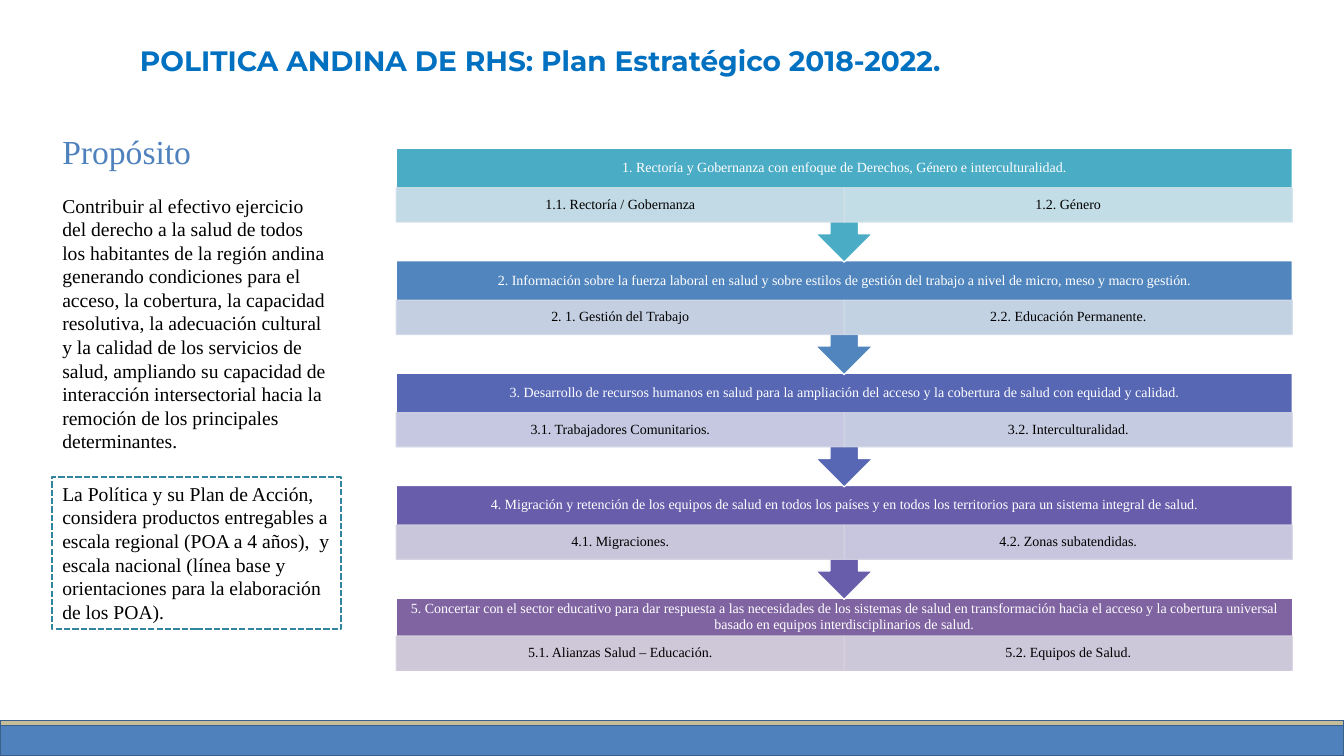
"""Build the slide on the Andean health workforce policy and its five strategic lines."""
from dataclasses import dataclass
from typing import NamedTuple

from lxml.etree import SubElement
from pptx import Presentation
from pptx.dml.color import RGBColor
from pptx.enum.dml import MSO_LINE
from pptx.enum.shapes import MSO_SHAPE
from pptx.enum.text import MSO_ANCHOR, PP_ALIGN
from pptx.oxml.ns import qn
from pptx.util import Pt


@dataclass(frozen=True)
class Theme:
    """Hold the colours, fonts and type sizes."""
    title: str = "0070C0"
    heading: str = "4F81BD"
    text: str = "000000"
    white: str = "FFFFFF"
    band: str = "4F81BD"
    band_trim: str = "C4BD97"
    band_line: str = "3A5F8C"
    note_line: str = "31859C"
    title_font: str = "Montserrat"
    body_font: str = "Times New Roman"
    title_size: float = 20
    heading_size: float = 24
    body_size: float = 14
    diagram_size: float = 10
    thin_line: float = 0.85
    note_width: float = 1.5


class Level(NamedTuple):
    """Describe one strategic line and its two components."""
    heading: str
    colour: str
    components: tuple
    tints: tuple


THEME = Theme()
LEVELS = [
    Level("1. Rectoría y Gobernanza con enfoque de Derechos, Género e interculturalidad.",
          "4BACC6", ("1.1. Rectoría / Gobernanza", "1.2. Género"), ("D0DFE9", "D0E3EA")),
    Level("2. Información sobre la fuerza laboral en salud y sobre estilos de gestión del "
          "trabajo a nivel de micro, meso y macro gestión.",
          "5185BD", ("2. 1. Gestión del Trabajo", "2.2. Educación Permanente."),
          ("D1D8E7", "D0DBE8")),
    Level("3. Desarrollo de recursos humanos en salud para la ampliación del acceso y la "
          "cobertura de salud con equidad y calidad.",
          "5767B4", ("3.1. Trabajadores Comunitarios.", "3.2. Interculturalidad."),
          ("D1D3E5", "D1D6E6")),
    Level("4. Migración y retención de los equipos de salud en todos los países y en todos "
          "los territorios para un sistema integral de salud.",
          "685DAB", ("4.1. Migraciones.", "4.2. Zonas subatendidas."), ("D4D2E2", "D2D2E4")),
    Level("5. Concertar con el sector educativo para dar respuesta a las necesidades de los "
          "sistemas de salud en transformación hacia el acceso y la cobertura universal "
          "basado en equipos interdisciplinarios de salud.",
          "8064A2", ("5.1. Alianzas Salud – Educación.", "5.2. Equipos de Salud."),
          ("D8D3E0", "D6D2E1")),
]
PURPOSE = (
    "Contribuir al efectivo ejercicio del derecho a la salud de todos los habitantes de la "
    "región andina generando condiciones para el acceso, la cobertura, la capacidad "
    "resolutiva, la adecuación cultural y la calidad de los servicios de salud, ampliando su "
    "capacidad de interacción intersectorial hacia la remoción de los principales determinantes."
)
NOTE = (
    "La Política y su Plan de Acción, considera productos entregables a escala regional (POA a "
    "4 años),  y escala nacional (línea base y orientaciones para la elaboración de los POA)."
)

SLIDE_WIDTH, SLIDE_HEIGHT = 960, 540
DIAGRAM_LEFT, DIAGRAM_TOP, DIAGRAM_WIDTH = 283, 106, 640
LEVEL_PITCH, CALLOUT_HEIGHT, LAST_HEIGHT = 80.28, 81.3, 52.6
HEADING_HEIGHT, LAST_HEADING_HEIGHT, COMPONENT_HEIGHT = 28.2, 27.2, 24.5
COLUMN_LEFT, COLUMN_WIDTH = 37.4, 206


def add_box(slide, left, top, width, height, fill=None, line=None,
            line_width=THEME.thin_line, kind=MSO_SHAPE.RECTANGLE):
    """Add a flat preset shape with an optional fill and outline."""
    shape = slide.shapes.add_shape(kind, Pt(left), Pt(top), Pt(width), Pt(height))
    shape.shadow.inherit = False
    if fill:
        shape.fill.solid()
        shape.fill.fore_color.rgb = RGBColor.from_string(fill)
    else:
        shape.fill.background()
    if line:
        shape.line.color.rgb = RGBColor.from_string(line)
        shape.line.width = Pt(line_width)
    else:
        shape.line.fill.background()
    return shape


def add_text_box(slide, left, top, width, height):
    """Add an empty text box that wraps."""
    box = slide.shapes.add_textbox(Pt(left), Pt(top), Pt(width), Pt(height))
    box.text_frame.word_wrap = True
    return box


def set_opacity(shape, percent):
    """Make the fill and outline of a shape partly transparent."""
    for colour in shape.element.spPr.iter(qn("a:srgbClr")):
        SubElement(colour, qn("a:alpha")).set("val", str(percent * 1000))


def write_text(shape, text, size=THEME.body_size, colour=THEME.text, font=THEME.body_font,
               bold=False, align=PP_ALIGN.LEFT, line_spacing=1.0, space_after=0):
    """Write a formatted paragraph after any text already in a shape."""
    frame = shape.text_frame
    paragraph = frame.add_paragraph() if frame.text else frame.paragraphs[0]
    paragraph.alignment = align
    paragraph.line_spacing = line_spacing
    paragraph.space_after = Pt(space_after)
    run = paragraph.add_run()
    run.text = text
    run.font.name = font
    run.font.size = Pt(size)
    run.font.bold = bold
    run.font.color.rgb = RGBColor.from_string(colour)


def write_label(shape, text, colour, vertical_inset):
    """Write a centred diagram label."""
    frame = shape.text_frame
    frame.word_wrap = True
    frame.vertical_anchor = MSO_ANCHOR.MIDDLE
    frame.margin_left = frame.margin_right = Pt(5.6)
    frame.margin_top = frame.margin_bottom = Pt(vertical_inset)
    write_text(shape, text, size=THEME.diagram_size, colour=colour,
               align=PP_ALIGN.CENTER, line_spacing=0.9)


def add_level(slide, level, top, is_last):
    """Add a strategic line with its heading, components and arrow to the next."""
    kind = MSO_SHAPE.RECTANGLE if is_last else MSO_SHAPE.DOWN_ARROW_CALLOUT
    height = LAST_HEIGHT if is_last else CALLOUT_HEIGHT
    heading_height = LAST_HEADING_HEIGHT if is_last else HEADING_HEIGHT
    add_box(slide, DIAGRAM_LEFT, top, DIAGRAM_WIDTH, height,
            fill=level.colour, line=THEME.white, kind=kind)
    heading = add_text_box(slide, DIAGRAM_LEFT, top, DIAGRAM_WIDTH, heading_height)
    write_label(heading, level.heading, THEME.white, vertical_inset=5.6)
    width = DIAGRAM_WIDTH / len(level.components)
    for column, (component, tint) in enumerate(zip(level.components, level.tints)):
        cell = add_box(slide, DIAGRAM_LEFT + column * width, top + heading_height,
                       width, COMPONENT_HEIGHT, fill=tint, line=tint)
        set_opacity(cell, 90)
        write_label(cell, component, THEME.text, vertical_inset=0.9)


def add_purpose(slide):
    """Add the purpose text and the dashed note below it."""
    purpose = add_text_box(slide, COLUMN_LEFT, 90, COLUMN_WIDTH, 240)
    write_text(purpose, "Propósito", size=THEME.heading_size,
               colour=THEME.heading, space_after=16)
    write_text(purpose, PURPOSE)
    note = add_box(slide, COLUMN_LEFT, 340.6, COLUMN_WIDTH, 109,
                   line=THEME.note_line, line_width=THEME.note_width)
    note.line.dash_style = MSO_LINE.SQUARE_DOT
    note.text_frame.word_wrap = True
    note.text_frame.vertical_anchor = MSO_ANCHOR.TOP
    write_text(note, NOTE)


def main():
    """Build and save the presentation."""
    presentation = Presentation()
    presentation.slide_width, presentation.slide_height = Pt(SLIDE_WIDTH), Pt(SLIDE_HEIGHT)
    slide = presentation.slides.add_slide(presentation.slide_layouts[6])
    add_box(slide, 0, 518.4, SLIDE_WIDTH, 21.6, fill=THEME.band, line=THEME.band_line)
    add_box(slide, 0, 514.8, SLIDE_WIDTH, 3.6, fill=THEME.band_trim, line=THEME.band_line)
    title = add_text_box(slide, 92.9, 27.4, 862, 31.5)
    write_text(title, "POLITICA ANDINA DE RHS: Plan Estratégico 2018-2022.",
               size=THEME.title_size, colour=THEME.title, font=THEME.title_font, bold=True)
    last = len(LEVELS) - 1
    for index, level in reversed(list(enumerate(LEVELS))):
        add_level(slide, level, DIAGRAM_TOP + index * LEVEL_PITCH, index == last)
    add_purpose(slide)
    presentation.save("out.pptx")


if __name__ == "__main__":
    main()
